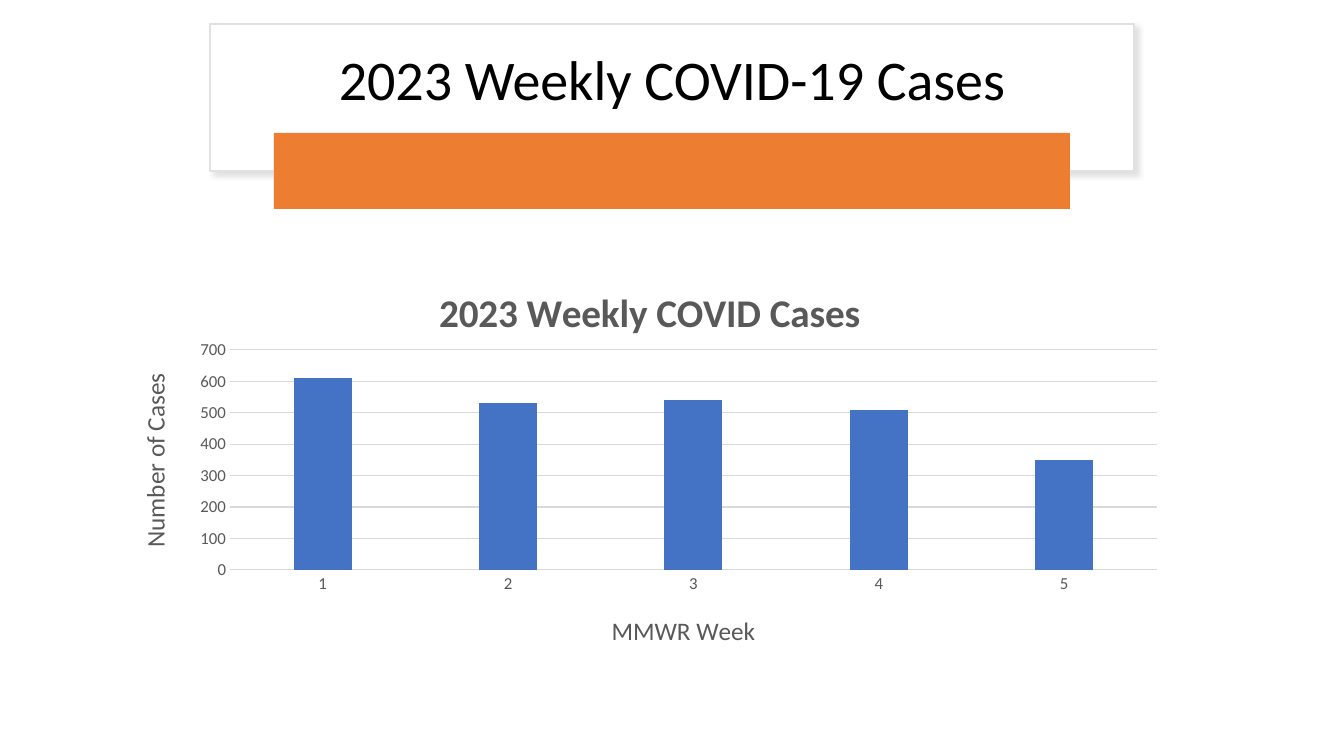
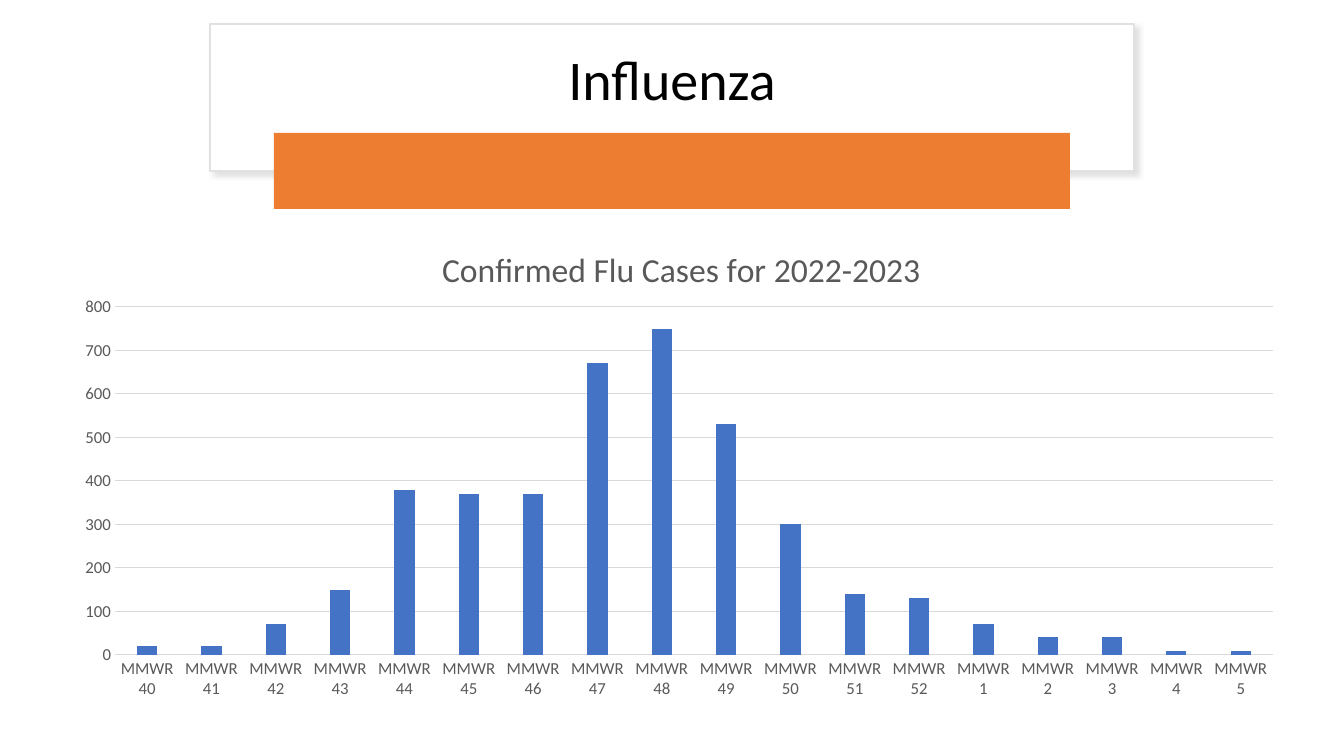
import lxml.etree
import pptx
import pptx.chart.data
import pptx.dml.color
import pptx.enum.chart
import pptx.enum.shapes
import pptx.enum.text
import pptx.oxml
import pptx.oxml.ns
import pptx.util

SCALE = 914400 / 100.8  # EMU per px
FONT = "Calibri"
COLORS = {"box": "FFFFFF", "box_line": "E1E1E1", "shadow": "C5C3C3",
          "band": "ED7D31", "title": "000000", "bar": "4472C4",
          "chart_text": "595959", "grid": "D9D9D9"}

# Boxes are left, top, width, height in px
HEADER_BOX = (210, 24, 924, 147)
TITLE_BOX = (232, 34, 880, 96)
BAND_BOX = (274, 133, 796, 76)

SLIDES = [
    {"title": "2023 Weekly COVID-19 Cases",
     "chart_box": (116, 261, 1062, 403),
     "plot_box": (230, 350, 927, 220),
     "chart_title": {"text": "2023 Weekly COVID Cases", "size": 28,
                     "bold": True, "at": (432, 279)},
     "category_title": {"text": "MMWR Week", "size": 18, "at": (607, 609)},
     "value_title": {"text": "Number of Cases", "size": 18, "at": (133, 369), "rot": -90},
     "categories": ["1", "2", "3", "4", "5"],
     "values": [610, 530, 540, 510, 350],
     "maximum": 700},
    {"title": "Influenza",
     "chart_box": (60, 222, 1238, 487),
     "plot_box": (115, 307, 1158, 348),
     "chart_title": {"text": "Confirmed Flu Cases for 2022-2023", "size": 24,
                     "at": (436, 241)},
     "categories": [f"MMWR {week}" for week in [*range(40, 53), *range(1, 6)]],
     "values": [20, 20, 70, 150, 380, 370, 370, 670, 750, 530,
                300, 140, 130, 70, 40, 40, 10, 10],
     "maximum": 800},
]


def emu(box):
    return [round(v * SCALE) for v in box]


def rgb(name):
    return pptx.dml.color.RGBColor.from_string(COLORS[name])


def style_font(font, size, color, bold=False):
    values = {"name": FONT, "size": pptx.util.Pt(size), "bold": bold}
    for key, value in values.items():
        setattr(font, key, value)
    font.color.rgb = rgb(color)


# Header: framed title with a band across its lower edge
def add_panel(s, kind, box, fill, line=None):
    sp = s.shapes.add_shape(kind, *emu(box))
    sp.shadow.inherit = False
    sp.fill.solid()
    sp.fill.fore_color.rgb = rgb(fill)
    if line:
        sp.line.color.rgb = rgb(line)
        sp.line.width = pptx.util.Pt(1)
    else:
        sp.line.fill.background()
    return sp


def add_shadow(sp):
    effects = sp.element.spPr.find(pptx.oxml.ns.qn("a:effectLst"))
    effects.append(pptx.oxml.parse_xml(
        f'<a:outerShdw {pptx.oxml.ns.nsdecls("a")} blurRad="50800" dist="38100" '
        f'dir="2700000" algn="tl" rotWithShape="0">'
        f'<a:srgbClr val="{COLORS["shadow"]}"><a:alpha val="50000"/></a:srgbClr>'
        f'</a:outerShdw>'))


def add_header(s, text):
    shapes = pptx.enum.shapes.MSO_SHAPE
    frame = add_panel(s, shapes.RECTANGLE, HEADER_BOX, "box", "box_line")
    add_shadow(frame)
    band = add_panel(s, shapes.ROUNDED_RECTANGLE, BAND_BOX, "band")
    band.adjustments[0] = 0

    title = s.shapes.title
    title.left, title.top, title.width, title.height = emu(TITLE_BOX)
    frame.element.addnext(title.element)
    tf = title.text_frame
    tf.text = text
    tf.vertical_anchor = pptx.enum.text.MSO_ANCHOR.MIDDLE
    p = tf.paragraphs[0]
    p.alignment = pptx.enum.text.PP_ALIGN.CENTER
    p.line_spacing = 0.9
    style_font(p.runs[0].font, 40, "title")


# Chart parts are placed as fractions of the chart box
def place(element, box, chart_box, inner=False):
    qn = pptx.oxml.ns.qn
    layout = element.find(qn("c:layout"))
    if layout is None:
        layout = lxml.etree.Element(qn("c:layout"))
        element.insert(0, layout)
    for child in list(layout):
        layout.remove(child)
    manual = lxml.etree.SubElement(layout, qn("c:manualLayout"))
    left, top, width, height = chart_box
    settings = [("layoutTarget", "inner")] if inner else []
    settings += [("xMode", "edge"), ("yMode", "edge"),
                 ("x", (box[0] - left) / width), ("y", (box[1] - top) / height)]
    if inner:
        settings += [("w", box[2] / width), ("h", box[3] / height)]
    for tag, value in settings:
        lxml.etree.SubElement(manual, qn(f"c:{tag}")).set("val", str(value))


def set_title(title, content, chart_box):
    tf = title.text_frame
    tf.text = content["text"]
    style_font(tf.paragraphs[0].runs[0].font, content["size"], "chart_text",
               content.get("bold", False))
    body = title.element.find(".//" + pptx.oxml.ns.qn("a:bodyPr"))
    body.set("rot", str(content.get("rot", 0) * 60000))
    body.set("vert", "horz")
    place(title.element, content["at"], chart_box)


def grid_line(line):
    line.color.rgb = rgb("grid")
    line.width = pptx.util.Pt(0.75)


def add_column_chart(s, content):
    enums = pptx.enum.chart
    data = pptx.chart.data.CategoryChartData()
    data.categories = content["categories"]
    data.add_series("Series 1", content["values"])
    box = content["chart_box"]
    chart = s.shapes.add_chart(enums.XL_CHART_TYPE.COLUMN_CLUSTERED, *emu(box), data).chart
    chart.has_legend = False
    style_font(chart.font, 10, "title")
    chart.has_title = True
    set_title(chart.chart_title, content["chart_title"], box)

    plot = chart.plots[0]
    for key, value in {"gap_width": 219, "overlap": -27, "vary_by_categories": False}.items():
        setattr(plot, key, value)
    fill = plot.series[0].format.fill
    fill.solid()
    fill.fore_color.rgb = rgb("bar")

    axes = {"category_title": chart.category_axis, "value_title": chart.value_axis}
    for key, axis in axes.items():
        axis.major_tick_mark = axis.minor_tick_mark = enums.XL_TICK_MARK.NONE
        style_font(axis.tick_labels.font, 12, "chart_text")
        if key in content:
            set_title(axis.axis_title, content[key], box)
        else:
            axis.has_title = False
    grid_line(chart.category_axis.format.line)
    value_axis = chart.value_axis
    value_axis.format.line.fill.background()
    value_axis.has_major_gridlines = True
    grid_line(value_axis.major_gridlines.format.line)
    scale = {"minimum_scale": 0, "maximum_scale": content["maximum"], "major_unit": 100}
    for key, value in scale.items():
        setattr(value_axis, key, value)
    plot_area = chart.element.find(".//" + pptx.oxml.ns.qn("c:plotArea"))
    place(plot_area, content["plot_box"], box, inner=True)


def main():
    prs = pptx.Presentation()
    prs.slide_width, prs.slide_height = emu((1344, 756))
    for content in SLIDES:
        s = prs.slides.add_slide(prs.slide_layouts[5])
        add_header(s, content["title"])
        add_column_chart(s, content)
    prs.save("out.pptx")


if __name__ == "__main__":
    main()
